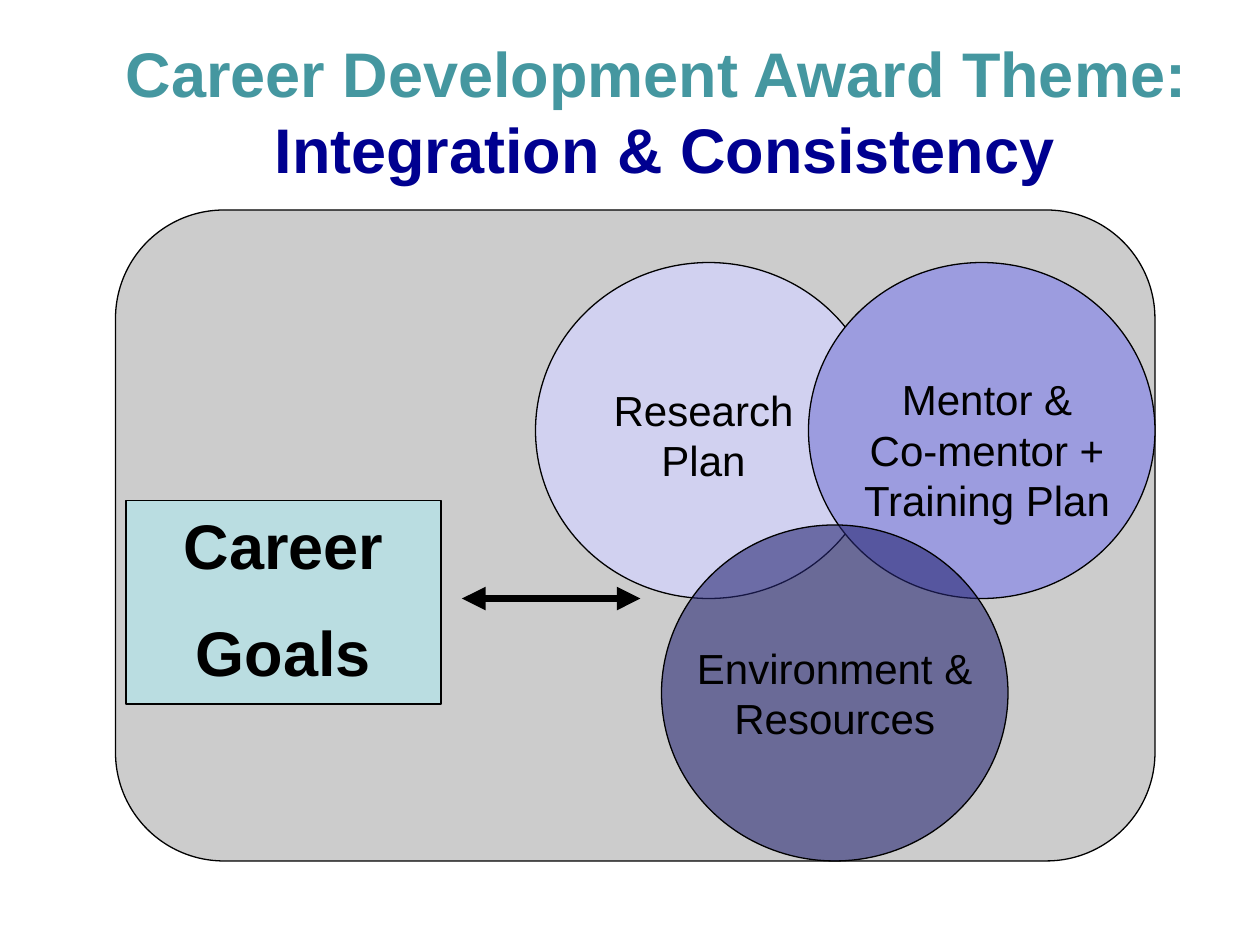
from dataclasses import dataclass

from lxml.etree import SubElement
from pptx import Presentation
from pptx.dml.color import RGBColor
from pptx.enum.shapes import MSO_CONNECTOR as Connector, MSO_SHAPE as Shape
from pptx.enum.text import MSO_ANCHOR as Anchor, PP_ALIGN as Align
from pptx.oxml.ns import qn
from pptx.util import Pt


@dataclass(frozen=True)
class Theme:
    font: str = "Arial"
    heading_size: int = 36
    label_size: int = 24
    ink: str = "000000"
    title_teal: str = "4597A0"
    title_navy: str = "000090"
    panel: str = "CCCCCC"
    goals: str = "BADDE1"
    research: str = "D1D1F0"
    mentor: str = "9C9CDF"
    environment: str = "262673"


THEME = Theme()
CIRCLE_SIZE = (198, 192)


def rgb(color):
    return RGBColor.from_string(color)


def style_run(run, size, color=THEME.ink, bold=False):
    run.font.name = THEME.font
    run.font.size = Pt(size)
    run.font.bold = bold
    run.font.color.rgb = rgb(color)


def write_centered(frame, text, size, bold=False, gap=0):
    """Fill the frame with centred paragraphs, set apart by gap points."""
    frame.text = text
    for index, paragraph in enumerate(frame.paragraphs):
        paragraph.alignment = Align.CENTER
        paragraph.space_before = Pt(gap if index else 0)
        for run in paragraph.runs:
            style_run(run, size, bold=bold)


def add_title(slide):
    title = slide.shapes.title
    title.left, title.top, title.width, title.height = map(Pt, (60, 18, 630, 90))
    frame = title.text_frame
    frame.word_wrap = True
    frame.vertical_anchor = Anchor.MIDDLE
    heading = frame.paragraphs[0]
    heading.text = "Career Development Award Theme:\v Integration & Consistency"
    heading.alignment = Align.CENTER
    for run, color in zip(heading.runs, (THEME.title_teal, THEME.title_navy)):
        style_run(run, THEME.heading_size, color, bold=True)


def add_figure(slide, kind, left, top, width, height, fill, line_width=0.75):
    figure = slide.shapes.add_shape(kind, Pt(left), Pt(top), Pt(width), Pt(height))
    figure.shadow.inherit = False
    figure.fill.solid()
    figure.fill.fore_color.rgb = rgb(fill)
    figure.line.color.rgb = rgb(THEME.ink)
    figure.line.width = Pt(line_width)
    return figure


def add_circle(slide, left, top, fill):
    return add_figure(slide, Shape.OVAL, left, top, *CIRCLE_SIZE, fill)


def set_opacity(figure, percent):
    color = figure.fill._xPr.find(qn("a:solidFill"))[0]
    SubElement(color, qn("a:alpha"), val=str(percent * 1000))


def add_label(slide, text, left, top, width, height):
    label = slide.shapes.add_textbox(Pt(left), Pt(top), Pt(width), Pt(height))
    label.text_frame.word_wrap = True
    write_centered(label.text_frame, text, THEME.label_size)


def add_double_arrow(slide, left, right, y):
    arrow = slide.shapes.add_connector(
        Connector.STRAIGHT, Pt(left), Pt(y), Pt(right), Pt(y))
    arrow.line.color.rgb = rgb(THEME.ink)
    arrow.line.width = Pt(4.5)
    for end in ("a:headEnd", "a:tailEnd"):
        SubElement(arrow.line._get_or_add_ln(), qn(end), type="triangle")
    SubElement(arrow._element.spPr, qn("a:effectLst"))


def add_plan_circles(slide):
    add_circle(slide, 306, 150, THEME.research)
    add_circle(slide, 462, 150, THEME.mentor)
    environment = add_circle(slide, 378, 300, THEME.environment)
    set_opacity(environment, 59)
    frame = environment.text_frame
    frame.word_wrap = False
    frame.vertical_anchor = Anchor.MIDDLE
    write_centered(frame, "Environment &\nResources", THEME.label_size)
    add_label(slide, "Research Plan", 336, 216, 132, 65)
    add_label(slide, "Mentor &\vCo-mentor +\vTraining Plan", 486, 210, 156, 94)


def add_goals(slide):
    goals = add_figure(slide, Shape.RECTANGLE, 72, 286, 180, 116.5, THEME.goals, 1)
    goals.text_frame.word_wrap = True
    goals.text_frame.vertical_anchor = Anchor.TOP
    write_centered(goals.text_frame, "Career\nGoals", THEME.heading_size,
                   bold=True, gap=18)


def main():
    deck = Presentation()
    deck.slide_width, deck.slide_height = Pt(720), Pt(540)
    slide = deck.slides.add_slide(deck.slide_layouts.get_by_name("Title Only"))
    add_title(slide)
    add_figure(slide, Shape.ROUNDED_RECTANGLE, 66, 120, 594, 372, THEME.panel)
    add_plan_circles(slide)
    add_goals(slide)
    add_double_arrow(slide, 264, 366, 342)
    deck.save("out.pptx")


if __name__ == "__main__":
    main()
